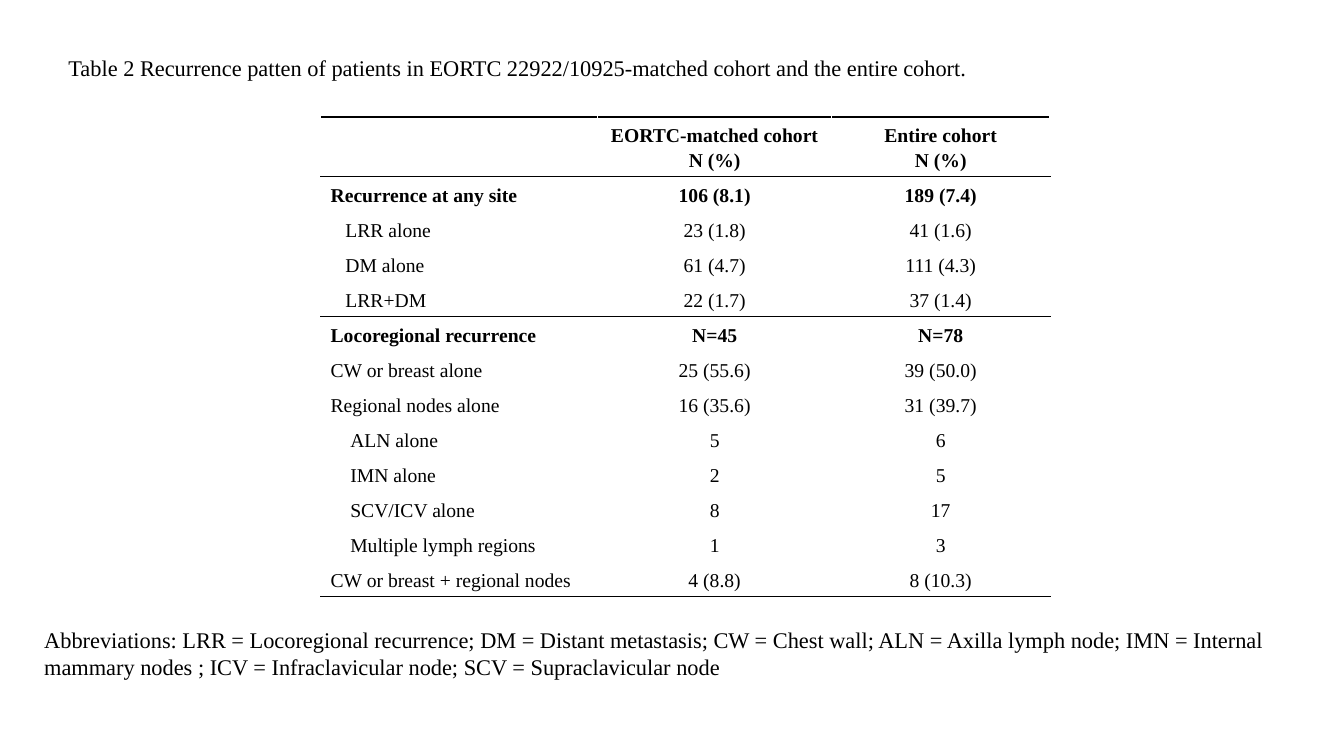
from lxml.etree import SubElement
from pptx import Presentation
from pptx.dml.color import RGBColor
from pptx.enum.text import MSO_AUTO_SIZE as AutoSize, PP_ALIGN as Align
from pptx.oxml.ns import qn
from pptx.util import Inches, Pt

COLORS = {"ink": "000000", "paper": "FFFFFF"}
FONT = "Times New Roman"
GRID_COLUMNS, GRID_ROWS = 96, 54
CELL_PADDING = 0.72
SIDES = {"left": "a:lnL", "right": "a:lnR", "top": "a:lnT", "bottom": "a:lnB"}

CAPTION = "Table 2 Recurrence patten of patients in EORTC 22922/10925-matched cohort and the entire cohort."
ABBREVIATIONS = (
    "Abbreviations: LRR = Locoregional recurrence; DM = Distant metastasis; CW = Chest wall; "
    "ALN = Axilla lymph node; IMN = Internal mammary nodes ; ICV = Infraclavicular node; "
    "SCV = Supraclavicular node"
)
COLUMN_WIDTHS = [19.8, 16.7, 15.6]
HEADER_HEIGHT, ROW_HEIGHT = 4.25, 2.45
SITE, REGION = 1.05, 1.4
RECURRENCES = [
    (0, "", "EORTC-matched cohort\nN (%)", "Entire cohort\nN (%)"),
    (0, "Recurrence at any site", "106 (8.1)", "189 (7.4)"),
    (SITE, "LRR alone", "23 (1.8)", "41 (1.6)"),
    (SITE, "DM alone", "61 (4.7)", "111 (4.3)"),
    (SITE, "LRR+DM", "22 (1.7)", "37 (1.4)"),
    (0, "Locoregional recurrence", "N=45", "N=78"),
    (0, "CW or breast alone", "25 (55.6)", "39 (50.0)"),
    (0, "Regional nodes alone", "16 (35.6)", "31 (39.7)"),
    (REGION, "ALN alone", "5", "6"),
    (REGION, "IMN alone", "2", "5"),
    (REGION, "SCV/ICV alone", "8", "17"),
    (REGION, "Multiple lymph regions", "1", "3"),
    (0, "CW or breast + regional nodes", "4 (8.8)", "8 (10.3)"),
]
BOLD_ROWS = {0, 1, 5}
RULES_ABOVE = {0, 1, 5, len(RECURRENCES)}


def write(frame, text, size=16, bold=False, align=None, spacing=None):
    for index, line in enumerate(text.split("\n")):
        paragraph = frame.paragraphs[0] if index == 0 else frame.add_paragraph()
        paragraph.alignment = align
        paragraph.line_spacing = spacing
        run = paragraph.add_run()
        run.text = line
        run.font.name = FONT
        run.font.size = Pt(size)
        run.font.bold = bold
        run.font.color.rgb = RGBColor.from_string(COLORS["ink"])


class SlideBuilder:
    def __init__(self, presentation):
        self.slide = presentation.slides.add_slide(presentation.slide_layouts[6])
        self.column = presentation.slide_width / GRID_COLUMNS
        self.row = presentation.slide_height / GRID_ROWS

    def across(self, columns):
        return round(columns * self.column)

    def down(self, rows):
        return round(rows * self.row)

    def place(self, left, top, width, height):
        return self.across(left), self.down(top), self.across(width), self.down(height)

    def text(self, text, *place):
        frame = self.slide.shapes.add_textbox(*self.place(*place)).text_frame
        frame.word_wrap = True
        frame.auto_size = AutoSize.SHAPE_TO_FIT_TEXT
        write(frame, text)

    def border(self, cell, ruled_sides):
        properties = cell._tc.get_or_add_tcPr()
        for side, tag in SIDES.items():
            line = SubElement(properties, qn(tag), w=str(Pt(1)))
            fill = SubElement(line, qn("a:solidFill"))
            color = COLORS["ink" if side in ruled_sides else "paper"]
            SubElement(fill, qn("a:srgbClr"), val=color)

    def table(self, records, widths, left, top):
        heights = [HEADER_HEIGHT] + [ROW_HEIGHT] * (len(records) - 1)
        place = self.place(left, top, sum(widths), sum(heights))
        table = self.slide.shapes.add_table(len(records), len(widths), *place).table
        table.first_row = table.horz_banding = False
        for column, width in zip(table.columns, widths):
            column.width = self.across(width)
        for row_index, (indent, *texts) in enumerate(records):
            table.rows[row_index].height = self.down(heights[row_index])
            ruled = {side for side, edge in (("top", row_index), ("bottom", row_index + 1))
                     if edge in RULES_ABOVE}
            for column_index, text in enumerate(texts):
                cell = table.cell(row_index, column_index)
                label = column_index == 0
                cell.margin_left = self.across(CELL_PADDING + (indent if label else 0))
                self.border(cell, ruled)
                cell.fill.background()
                if text:
                    write(cell.text_frame, text, size=14, bold=row_index in BOLD_ROWS,
                          align=Align.JUSTIFY if label else Align.CENTER, spacing=1.15)


def main():
    presentation = Presentation()
    presentation.slide_width = Inches(13.33)
    presentation.slide_height = Inches(7.5)
    builder = SlideBuilder(presentation)
    builder.table(RECURRENCES, COLUMN_WIDTHS, 22.9, 8.35)
    builder.text(CAPTION, 4.18, 3.53, 77.2, 2.66)
    builder.text(ABBREVIATIONS, 2.45, 44.35, 91.17, 4.6)
    presentation.save("out.pptx")


if __name__ == "__main__":
    main()
